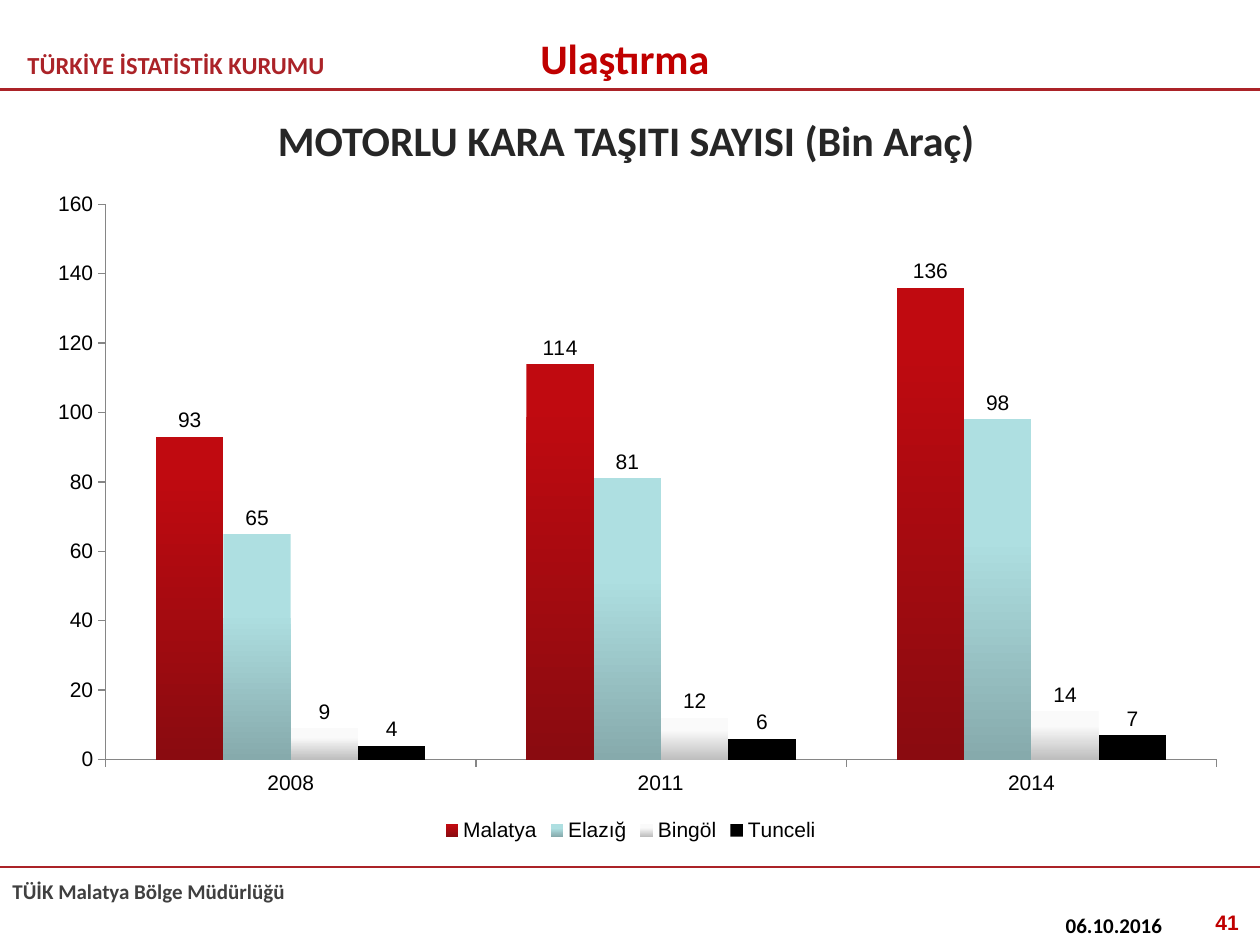
from dataclasses import dataclass

from lxml import etree
from pptx import Presentation
from pptx.chart.data import CategoryChartData
from pptx.dml.color import RGBColor
from pptx.enum import chart as ch, shapes, text
from pptx.oxml import ns
from pptx.util import Inches, Pt


@dataclass(frozen=True)
class Theme:
    brand: str = "AB2328"
    accent: str = "C00000"
    title: str = "262626"
    footer: str = "404040"
    black: str = "000000"
    axis: str = "868686"
    heading_font: str = "Calibri"
    chart_font: str = "Arial"
    heading_size: int = 24
    agency_size: int = 14
    small_size: int = 12


THEME = Theme()
YEARS = ["2008", "2011", "2014"]
# Province: values, top colour, bottom colour, start of the gradient
PROVINCES = {
    "Malatya": ((93, 114, 136), "C00A10", "8A0B10", 0.1),
    "Elazığ": ((65, 81, 98), "AEDFE1", "86AAAC", 0.35),
    "Bingöl": ((9, 12, 14), "FAFAFA", "BEBEBE", 0.3),
    "Tunceli": ((4, 6, 7), THEME.black, THEME.black, 0),
}
PLOT_AREA = {"x": 0.07, "y": 0.04, "w": 0.91, "h": 0.83}


def rgb(value):
    return RGBColor.from_string(value)


def style_font(font, size, color, name, bold=False):
    font.size = Pt(size)
    font.name = name
    font.bold = bold
    font.color.rgb = rgb(color)


def write(shape, words, size, color, align=text.PP_ALIGN.LEFT,
          anchor=text.MSO_ANCHOR.TOP, font=THEME.heading_font):
    frame = shape.text_frame
    frame.word_wrap = True
    frame.vertical_anchor = anchor
    paragraph = frame.paragraphs[0]
    paragraph.alignment = align
    run = paragraph.add_run()
    run.text = words
    style_font(run.font, size, color, font, bold=True)


def add_label(slide, box, words, size, color, **layout):
    label = slide.shapes.add_textbox(*map(Inches, box))
    write(label, words, size, color, **layout)


def set_title(slide, box, words):
    title = slide.shapes.title
    title.left, title.top, title.width, title.height = map(Inches, box)
    write(title, words, THEME.heading_size, THEME.title,
          text.PP_ALIGN.CENTER, text.MSO_ANCHOR.MIDDLE)


def add_rule(slide, y):
    rule = slide.shapes.add_connector(
        shapes.MSO_CONNECTOR.STRAIGHT, 0, Inches(y), Inches(10), Inches(y))
    rule.line.color.rgb = rgb(THEME.brand)
    rule.line.width = Pt(1.5)
    etree.SubElement(rule._element.spPr, ns.qn("a:effectLst"))


def style_axis(axis):
    axis.has_major_gridlines = False
    axis.major_tick_mark = ch.XL_TICK_MARK.OUTSIDE
    axis.format.line.color.rgb = rgb(THEME.axis)
    style_font(axis.tick_labels.font, THEME.small_size, THEME.black,
               THEME.chart_font)


def style_series(series, top, bottom, start):
    fill = series.format.fill
    if top == bottom:
        fill.solid()
        fill.fore_color.rgb = rgb(top)
    else:
        fill.gradient()
        fill.gradient_angle = 270
        first, last = fill.gradient_stops
        first.color.rgb, first.position = rgb(top), start
        last.color.rgb, last.position = rgb(bottom), 1
    series.invert_if_negative = False
    labels = series.data_labels
    labels.show_value = True
    labels.number_format = "0"
    labels.number_format_is_linked = False
    labels.position = ch.XL_LABEL_POSITION.OUTSIDE_END
    style_font(labels.font, THEME.small_size, THEME.black, THEME.chart_font)


def place_plot_area(chart):
    plot_area = chart._chartSpace.chart.plotArea
    for old in plot_area.findall(ns.qn("c:layout")):
        plot_area.remove(old)
    layout = etree.Element(ns.qn("c:layout"))
    plot_area.insert(0, layout)
    manual = etree.SubElement(layout, ns.qn("c:manualLayout"))
    settings = {"layoutTarget": "inner", "xMode": "edge", "yMode": "edge",
                **PLOT_AREA}
    for tag, value in settings.items():
        etree.SubElement(manual, ns.qn(f"c:{tag}"), val=str(value))


def add_vehicle_chart(slide, box):
    vehicles = CategoryChartData(number_format="0")
    vehicles.categories = YEARS
    for province, (counts, *_) in PROVINCES.items():
        vehicles.add_series(province, counts)
    chart = slide.shapes.add_chart(
        ch.XL_CHART_TYPE.COLUMN_CLUSTERED, *map(Inches, box), vehicles).chart
    style_font(chart.font, THEME.small_size, THEME.black, THEME.chart_font)
    chart.has_title = False

    # Axes
    style_axis(chart.category_axis)
    counts_axis = chart.value_axis
    style_axis(counts_axis)
    counts_axis.minimum_scale = 0
    counts_axis.maximum_scale = 160
    counts_axis.major_unit = 20

    # Columns
    plot = chart.plots[0]
    plot.gap_width = 150
    plot.overlap = 0
    plot.vary_by_categories = False
    for series, (_, *gradient) in zip(plot.series, PROVINCES.values()):
        style_series(series, *gradient)

    # Legend and plot area
    chart.has_legend = True
    chart.legend.position = ch.XL_LEGEND_POSITION.BOTTOM
    chart.legend.include_in_layout = False
    style_font(chart.legend.font, THEME.small_size, THEME.black,
               THEME.chart_font)
    place_plot_area(chart)


def main():
    deck = Presentation()
    deck.slide_width, deck.slide_height = Inches(10), Inches(7.5)
    slide = deck.slides.add_slide(deck.slide_layouts[5])
    middle = text.MSO_ANCHOR.MIDDLE

    # Header
    add_label(slide, (0.12, 0.32, 3.54, 0.39), "TÜRKİYE İSTATİSTİK KURUMU",
              THEME.agency_size, THEME.brand, anchor=middle)
    add_label(slide, (3.03, 0.21, 3.86, 0.5), "Ulaştırma",
              THEME.heading_size, THEME.accent,
              align=text.PP_ALIGN.CENTER, anchor=middle)
    add_rule(slide, 0.71)

    # Title and chart
    set_title(slide, (0.47, 0.6, 9, 1.02),
              "MOTORLU KARA TAŞITI SAYISI (Bin Araç)")
    add_vehicle_chart(slide, (0.16, 1.41, 9.69, 5.31))

    # Footer
    add_rule(slide, 6.88)
    add_label(slide, (0, 6.92, 4.29, 0.3), "TÜİK Malatya Bölge Müdürlüğü",
              THEME.small_size, THEME.footer)
    add_label(slide, (8.36, 7.19, 2.33, 0.52), "06.10.2016",
              THEME.small_size, THEME.black)
    add_label(slide, (7.6, 7.17, 2.33, 0.52), "41",
              THEME.small_size, THEME.accent,
              align=text.PP_ALIGN.RIGHT, font=THEME.chart_font)

    deck.save("out.pptx")


if __name__ == "__main__":
    main()
